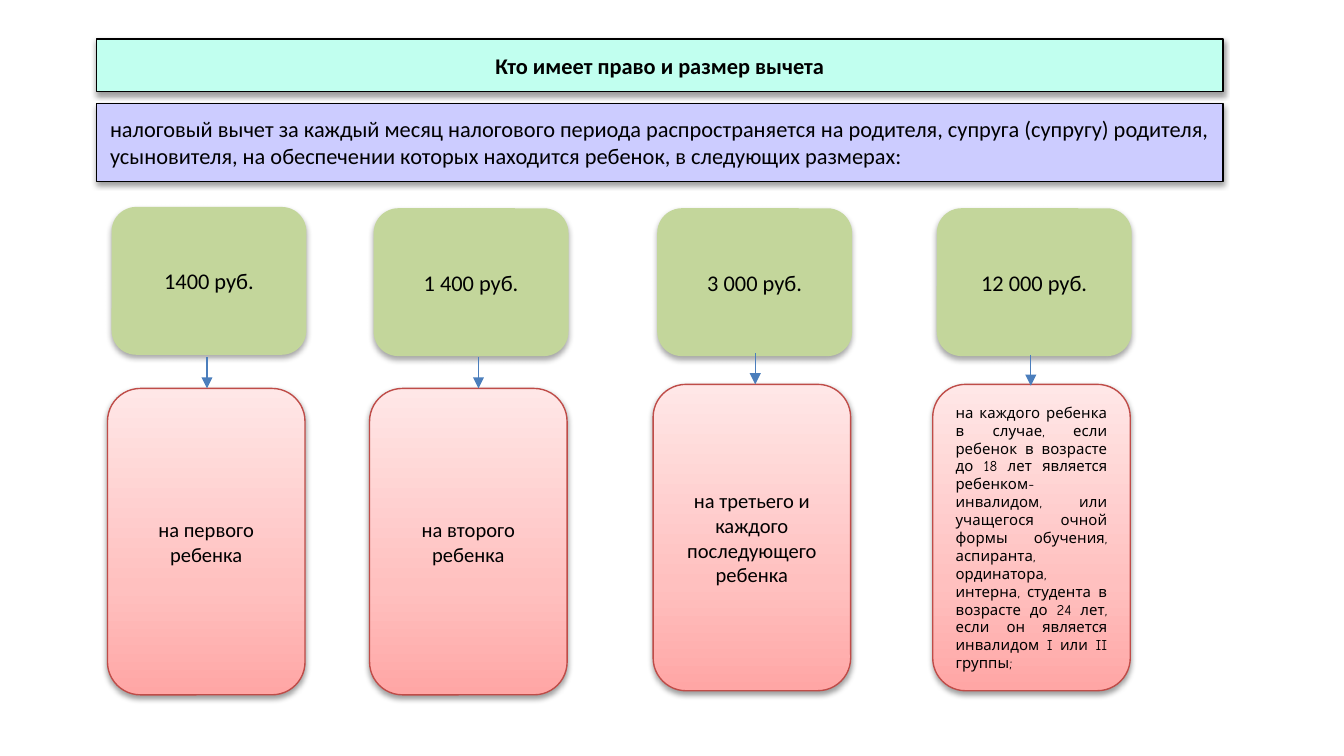
from copy import deepcopy

from pptx import Presentation
from pptx.dml.color import RGBColor
from pptx.enum.shapes import MSO_CONNECTOR, MSO_SHAPE
from pptx.enum.text import MSO_ANCHOR, MSO_AUTO_SIZE, PP_ALIGN as AL
from pptx.oxml.ns import qn
from pptx.util import Inches, Pt
from lxml.etree import SubElement

BLACK = RGBColor(0x00, 0x00, 0x00)
MINT = RGBColor(0xC1, 0xFF, 0xEF)
LILAC = RGBColor(0xCC, 0xCC, 0xFF)
GREEN = RGBColor(0xC3, 0xD6, 0x9B)
RED = RGBColor(0xBF, 0x4C, 0x48)
BLUE = RGBColor(0x4B, 0x7E, 0xBC)
PINKS = [(0, RGBColor(0xFF, 0xA6, 0xA5)), (0.35, RGBColor(0xFF, 0xC0, 0xBF)),
         (1, RGBColor(0xFF, 0xE7, 0xE7))]

# Content
TITLE = "Кто имеет право и размер вычета"
INTRO = ("налоговый вычет за каждый месяц налогового периода распространяется "
         "на родителя, супруга (супругу) родителя, усыновителя, на обеспечении "
         "которых находится ребенок, в следующих размерах:")
NORMAL = dict(size=11)
SMALL = dict(size=8, font="Comic Neue", align=AL.JUSTIFY)
# amount, recipient, text format, left, amount top, arrow x, arrow top, recipient top
COLUMNS = [
    ("1400 руб.", "на первого ребенка", NORMAL, 0.8, 1.54, 1.54, 2.66, 2.89),
    ("1 400 руб.", "на второго ребенка", NORMAL, 2.75, 1.55, 3.56, 2.66, 2.89),
    ("3 000 руб.", "на третьего и каждого последующего ребенка", NORMAL,
     4.86, 1.55, 5.62, 2.63, 2.86),
    ("12 000 руб.",
     "на каждого ребенка в случае, если ребенок в возрасте до 18 лет является "
     "ребенком-инвалидом, или учащегося очной формы обучения, аспиранта, "
     "ординатора, интерна, студента в возрасте до 24 лет, если он является "
     "инвалидом I или II группы;", SMALL, 6.94, 1.55, 7.67, 2.64, 2.86),
]
BANNER_LEFT, BANNER_W = 0.72, 8.38
AMOUNT_W, AMOUNT_H, AMOUNT_SHIFT = 1.45, 1.1, 0.03
CARD_W, CARD_H = 1.47, 2.28
ARROW_H = 0.23


def write(sp, text, size=12, font="Calibri", bold=False, align=AL.CENTER):
    tf = sp.text_frame
    tf.word_wrap = True
    tf.auto_size = MSO_AUTO_SIZE.NONE
    tf.vertical_anchor = MSO_ANCHOR.MIDDLE
    p = tf.paragraphs[0]
    p.alignment = align
    r = p.add_run()
    r.text = text
    r.font.size, r.font.name, r.font.bold = Pt(size), font, bold
    r.font.color.rgb = BLACK


def add_shadow(sp, distance, opacity):
    sp.shadow.inherit = False
    effects = sp._element.spPr.find(qn("a:effectLst"))
    shadow = SubElement(effects, qn("a:outerShdw"), blurRad=str(Pt(3.15)),
                        dist=str(Pt(distance)), dir="5400000", rotWithShape="0")
    color = SubElement(shadow, qn("a:srgbClr"), val=str(BLACK))
    SubElement(color, qn("a:alpha"), val=str(opacity * 1000))


def fill_gradient(sp, stops):
    sp.fill.gradient()
    sp.fill.gradient_angle = 90
    gs = sp._element.spPr.find(".//" + qn("a:gs"))
    gs.addnext(deepcopy(gs))
    for stop, (position, color) in zip(sp.fill.gradient_stops, stops):
        stop.position = position
        stop.color.rgb = color


def style(sp, fill, line=None, distance=1.57, opacity=38):
    if isinstance(fill, list):
        fill_gradient(sp, fill)
    else:
        sp.fill.solid()
        sp.fill.fore_color.rgb = fill
    if line is None:
        sp.line.fill.background()
    else:
        sp.line.color.rgb = line
        sp.line.width = Pt(0.75)
    add_shadow(sp, distance, opacity)


def add_box(s, kind, x, y, w, h):
    return s.shapes.add_shape(kind, Inches(x), Inches(y), Inches(w), Inches(h))


def add_arrow(s, x, y, h):
    arrow = s.shapes.add_connector(MSO_CONNECTOR.STRAIGHT, Inches(x), Inches(y),
                                   Inches(x), Inches(y + h))
    arrow.line.color.rgb = BLUE
    arrow.line.width = Pt(0.75)
    SubElement(arrow.line._get_or_add_ln(), qn("a:tailEnd"), type="triangle")
    SubElement(arrow._element.spPr, qn("a:effectLst"))


prs = Presentation()
prs.slide_width = Inches(10)
prs.slide_height = Inches(10 * 9 / 16)
s = prs.slides.add_slide(prs.slide_layouts[5])

# Title banner
title = s.shapes.title
title.left, title.top = Inches(BANNER_LEFT), Inches(0.29)
title.width, title.height = Inches(BANNER_W), Inches(0.39)
style(title, MINT, BLACK)
write(title, TITLE, bold=True)

# Introduction banner
intro = add_box(s, MSO_SHAPE.RECTANGLE, BANNER_LEFT, 0.77, BANNER_W, 0.58)
style(intro, LILAC, BLACK)
write(intro, INTRO, align=AL.LEFT)

# Amount, recipient and arrow of each column
for amount, who, fmt, x, amount_y, arrow_x, arrow_y, card_y in COLUMNS:
    sp = add_box(s, MSO_SHAPE.ROUNDED_RECTANGLE, x + AMOUNT_SHIFT, amount_y,
                 AMOUNT_W, AMOUNT_H)
    style(sp, GREEN, distance=1.81, opacity=35)
    write(sp, amount)
    card = add_box(s, MSO_SHAPE.ROUNDED_RECTANGLE, x, card_y, CARD_W, CARD_H)
    style(card, PINKS, RED)
    write(card, who, **fmt)
    add_arrow(s, arrow_x, arrow_y, ARROW_H)

prs.save("out.pptx")
